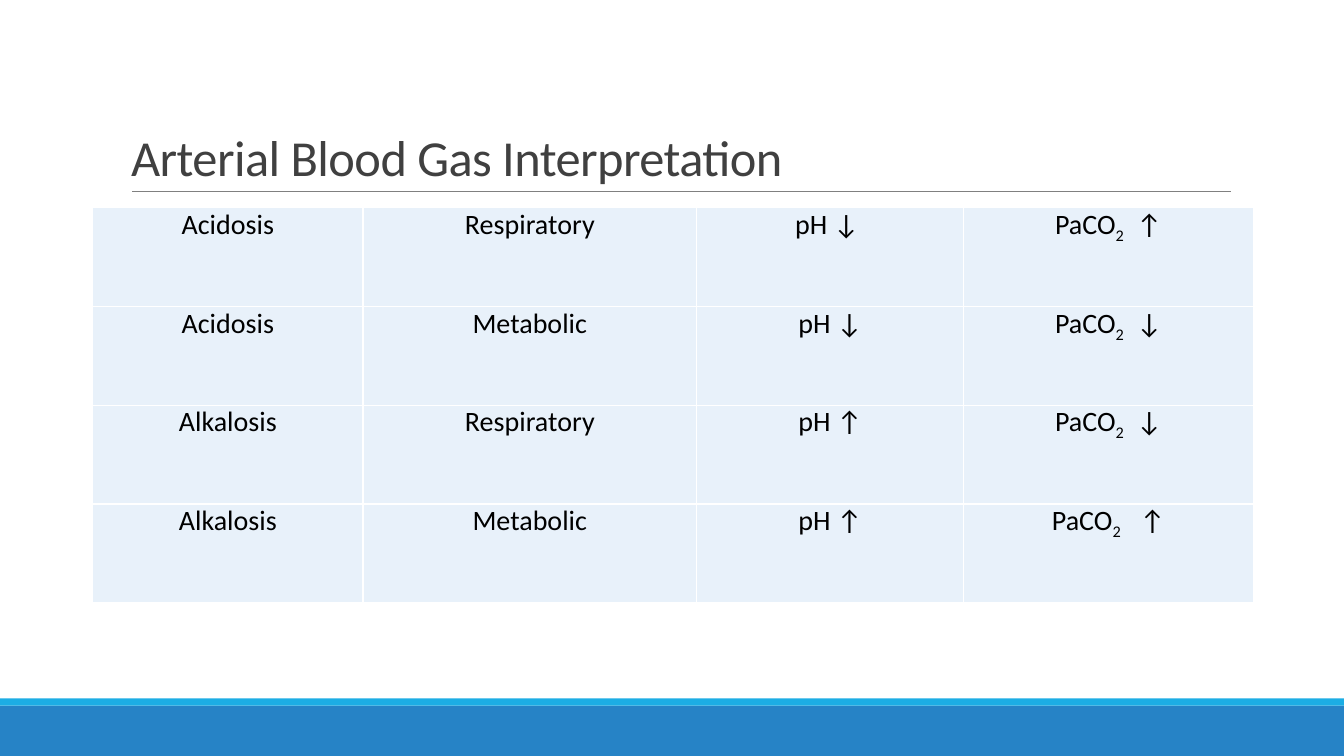
"""Build the arterial blood gas interpretation slide with its four-row table."""
from dataclasses import dataclass

from lxml import etree
from pptx import Presentation
from pptx.dml.color import RGBColor
from pptx.enum import shapes, text
from pptx.oxml import ns
from pptx.util import Inches, Pt


@dataclass(frozen=True)
class Theme:
    font: str = "Calibri"
    title_size: float = 36
    cell_size: float = 20
    title: str = "404040"
    body: str = "000000"
    rule: str = "808080"
    footer: str = "2683C6"
    accent: str = "1CADE4"
    cell: str = "E8F1FA"
    border: str = "FFFFFF"


theme = Theme()


def add_run(paragraph, content, size, color):
    run = paragraph.add_run()
    run.text = content
    formats = {"name": theme.font, "size": Pt(size), "bold": False}
    for name, value in formats.items():
        setattr(run.font, name, value)
    run.font.color.rgb = RGBColor.from_string(color)
    return run


def add_border(cell, side):
    line = etree.SubElement(cell._tc.get_or_add_tcPr(), ns.qn(f"a:{side}"), w=str(Pt(1)))
    fill = etree.SubElement(line, ns.qn("a:solidFill"))
    etree.SubElement(fill, ns.qn("a:srgbClr"), val=theme.border)


presentation = Presentation()
presentation.slide_width = Inches(13.33)
presentation.slide_height = Inches(7.5)
slide = presentation.slides.add_slide(presentation.slide_layouts[5])

for top, height, color in ((7, 0.5, theme.footer), (6.93, 0.07, theme.accent)):
    band = slide.shapes.add_shape(
        shapes.MSO_SHAPE.RECTANGLE, 0, Inches(top), presentation.slide_width, Inches(height)
    )
    band.shadow.inherit = False
    band.fill.solid()
    band.fill.fore_color.rgb = RGBColor.from_string(color)
    band.line.fill.background()

rule = slide.shapes.add_connector(
    shapes.MSO_CONNECTOR.STRAIGHT, Inches(1.31), Inches(1.9), Inches(12.21), Inches(1.9)
)
rule.line.color.rgb = RGBColor.from_string(theme.rule)
rule.line.width = Pt(0.5)
etree.SubElement(rule._element.spPr, ns.qn("a:effectLst"))

title = slide.shapes.title
title_place = {"left": 1.2, "top": 0.31, "width": 11, "height": 1.59}
for name, value in title_place.items():
    setattr(title, name, Inches(value))
title_frame = {
    "vertical_anchor": text.MSO_ANCHOR.BOTTOM,
    "word_wrap": True,
    "auto_size": text.MSO_AUTO_SIZE.NONE,
}
for name, value in title_frame.items():
    setattr(title.text_frame, name, value)
paragraph = title.text_frame.paragraphs[0]
paragraph.alignment = text.PP_ALIGN.LEFT
paragraph.line_spacing = 0.85
heading = add_run(paragraph, "Arterial Blood Gas Interpretation", theme.title_size, theme.title)
heading.font._element.set("spc", "-40")

findings = (
    ("Acidosis", "Respiratory", "pH ↓ ", ("PaCO", "2", "  ↑")),
    ("Acidosis", "Metabolic", "pH ↓", ("PaCO", "2", "  ↓")),
    ("Alkalosis", "Respiratory", "pH ↑", ("PaCO", "2", "  ↓")),
    ("Alkalosis", "Metabolic", "pH ↑", ("PaCO", "2", "   ↑")),
)
column_widths = (2.68, 3.31, 2.65, 2.87)
row_height = 0.98
table = slide.shapes.add_table(
    len(findings), len(column_widths), Inches(0.92), Inches(2.06),
    Inches(sum(column_widths)), Inches(row_height * len(findings)),
).table
table.first_row = False
table.horz_banding = False
for column, width in zip(table.columns, column_widths):
    column.width = Inches(width)

cell_format = {
    "margin_left": 0,
    "margin_top": 0,
    "margin_right": 0,
    "margin_bottom": 0,
    "vertical_anchor": text.MSO_ANCHOR.TOP,
}
for row, finding in enumerate(findings):
    table.rows[row].height = Inches(row_height)
    for column, content in enumerate(finding):
        cell = table.cell(row, column)
        for name, value in cell_format.items():
            setattr(cell, name, value)
        for side in ("lnL", "lnR", "lnT", "lnB"):
            add_border(cell, side)
        cell.fill.solid()
        cell.fill.fore_color.rgb = RGBColor.from_string(theme.cell)
        paragraph = cell.text_frame.paragraphs[0]
        paragraph.alignment = text.PP_ALIGN.CENTER
        for part in (content,) if isinstance(content, str) else content:
            run = add_run(paragraph, part, theme.cell_size, theme.body)
            if part == "2":
                run.font._element.set("baseline", "-25000")

presentation.save("out.pptx")
